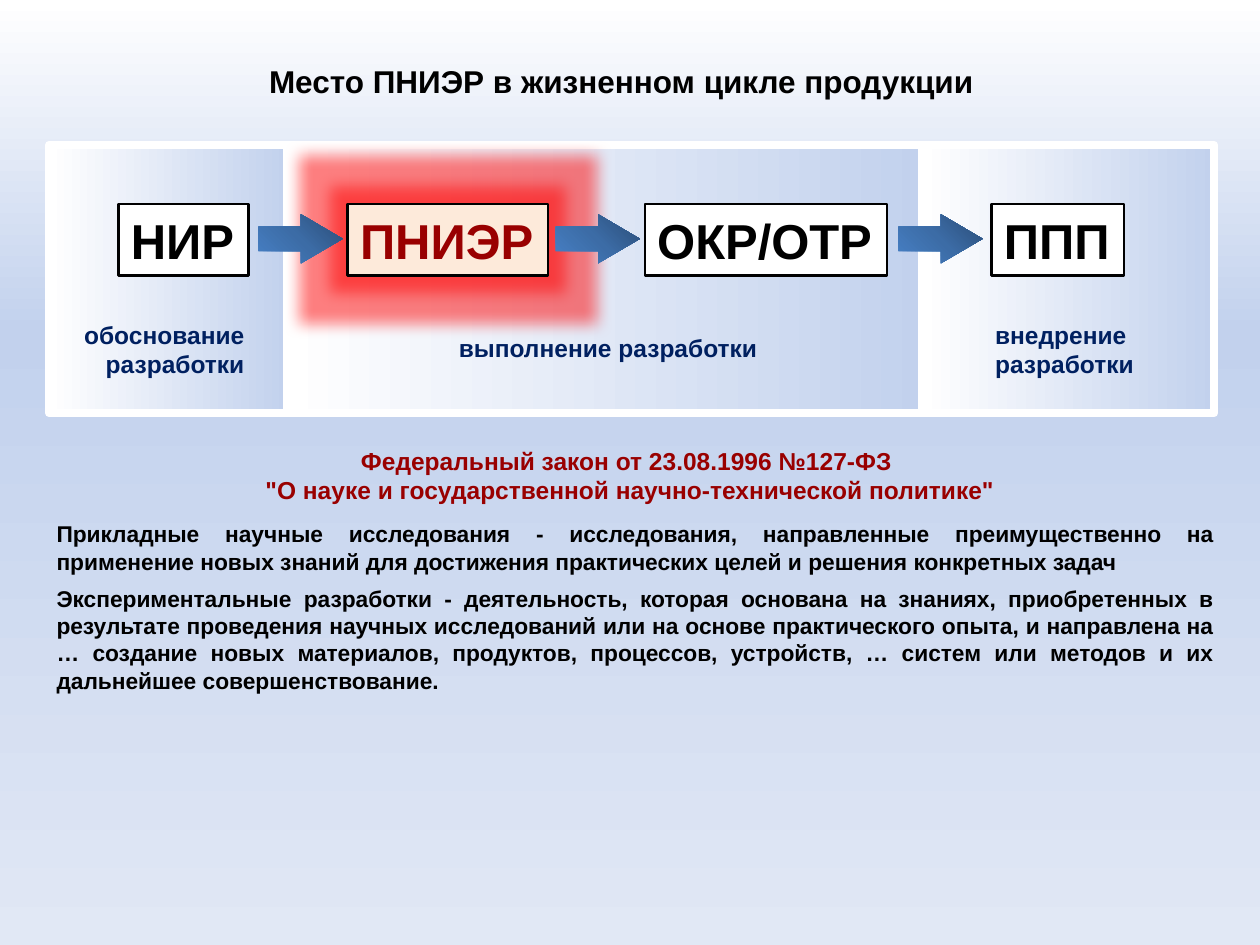
"""Build a slide on the place of applied research in the product life cycle."""
from typing import NamedTuple

from lxml import etree
from pptx import Presentation
from pptx.dml.color import RGBColor
from pptx.enum.shapes import MSO_SHAPE
from pptx.enum.text import MSO_ANCHOR, MSO_AUTO_SIZE, PP_ALIGN
from pptx.oxml import parse_xml
from pptx.oxml.ns import qn
from pptx.util import Cm, Pt

RECT, ARROW = MSO_SHAPE.RECTANGLE, MSO_SHAPE.RIGHT_ARROW
LEFT, MID, RIGHT, FULL = PP_ALIGN.LEFT, PP_ALIGN.CENTER, PP_ALIGN.RIGHT, PP_ALIGN.JUSTIFY
GROW, CENTER = MSO_AUTO_SIZE.SHAPE_TO_FIT_TEXT, MSO_ANCHOR.MIDDLE
FONT = "Arial"
BLACK = RGBColor(0x00, 0x00, 0x00)
WHITE = RGBColor(0xFF, 0xFF, 0xFF)
RED = RGBColor(0x99, 0x00, 0x00)
GLOW = RGBColor(0xFF, 0x00, 0x00)
NAVY = RGBColor(0x00, 0x20, 0x60)
PEACH = RGBColor(0xFD, 0xEA, 0xDA)
SKY = RGBColor(0xC2, 0xD1, 0xED)
PALE = RGBColor(0xE1, 0xE8, 0xF5)
DEEP = RGBColor(0x2A, 0x4C, 0x75)
STEEL = RGBColor(0x3C, 0x6C, 0xA6)
BLUE = RGBColor(0x47, 0x80, 0xC5)
SPACE = "http://schemas.openxmlformats.org/drawingml/2006/main"
DOWN = '<a:lin ang="5400000" scaled="0"/>'
ACROSS = '<a:lin ang="0" scaled="0"/>'
CORNER = ('<a:path path="circle"><a:fillToRect l="100000" t="0" r="0" b="100000"/>'
          '</a:path>')


class Area(NamedTuple):
    left: float
    top: float
    width: float
    height: float


class Stage(NamedTuple):
    text: str
    left: float
    width: float
    ink: RGBColor = BLACK
    fill: RGBColor = WHITE


class Note(NamedTuple):
    area: Area
    text: str
    size: float
    ink: RGBColor
    align: PP_ALIGN


PANELS = [(0.99, 4.8), (5.79, 12.8), (18.59, 5.89)]
STAGES = [
    Stage("НИР", 2.39, 2.62),
    Stage("ПНИЭР", 7.01, 4.04, RED, PEACH),
    Stage("ОКР/ОТР", 13, 4.88),
    Stage("ППП", 19.99, 2.67),
]
ARROWS = [5.21, 11.2, 18.11]
NOTES = [
    Note(Area(0.51, 1.12, 24.21, 1.02), "Место ПНИЭР в жизненном цикле продукции ",
         18, BLACK, MID),
    Note(Area(4.9, 8.86, 15.6, 1.45),
         "Федеральный закон от 23.08.1996 №127-ФЗ \n"
         "\"О науке и государственной научно-технической политике\"", 14, RED, MID),
    Note(Area(0.89, 10.36, 23.8, 1.37),
         "Прикладные научные исследования - исследования, направленные преимущественно "
         "на применение новых знаний для достижения практических целей и решения "
         "конкретных задач", 13, BLACK, FULL),
    Note(Area(0.89, 11.66, 23.8, 2.49),
         "Экспериментальные разработки - деятельность, которая основана на знаниях, "
         "приобретенных в результате проведения научных исследований или на основе "
         "практического опыта, и направлена на … создание новых материалов, продуктов, "
         "процессов, устройств, … систем или методов и их дальнейшее "
         "совершенствование.", 13, BLACK, FULL),
    Note(Area(0.99, 6.32, 4.19, 1.45), "обоснование разработки", 14, NAVY, RIGHT),
    Note(Area(8.51, 6.58, 7.01, 0.86), "выполнение разработки", 14, NAVY, RIGHT),
    Note(Area(19.81, 6.32, 4.6, 1.45), "внедрение разработки", 14, NAVY, LEFT),
]


def place(area: Area) -> list:
    return [Cm(side) for side in area]


def grade(root, fill, stops: list, shade: str) -> None:
    fill.gradient()
    marks = "".join(f'<a:gs pos="{spot * 1000}"><a:srgbClr val="{tone}"/></a:gs>'
                    for spot, tone in stops)
    old = next(root.iter(qn("a:gradFill")))
    old.getparent().replace(old, parse_xml(
        f'<a:gradFill xmlns:a="{SPACE}" rotWithShape="1">'
        f'<a:gsLst>{marks}</a:gsLst>{shade}</a:gradFill>'))


def write(frame, text: str, *, size: float, ink: RGBColor,
          align: PP_ALIGN = LEFT, wrap: bool = True) -> None:
    frame.word_wrap = wrap
    frame.auto_size = GROW
    for index, line in enumerate(text.split("\n")):
        para = frame.add_paragraph() if index else frame.paragraphs[0]
        para.alignment = align
        run = para.add_run()
        run.text = line
        run.font.name, run.font.size, run.font.bold = FONT, Pt(size), True
        run.font.color.rgb = ink


def block(slide, kind: MSO_SHAPE, area: Area):
    shape = slide.shapes.add_shape(kind, *place(area))
    shape.shadow.inherit = False
    return shape


def edge(shape, tone: RGBColor, width: float) -> None:
    shape.line.color.rgb = tone
    shape.line.width = Pt(width)


def panel(slide, left: float, width: float) -> None:
    shape = block(slide, RECT, Area(left, 2.92, width, 5.41))
    grade(shape.element, shape.fill, [(0, WHITE), (100, SKY)], ACROSS)
    edge(shape, WHITE, 4.5)


def halo(shape) -> None:
    effect = next(shape.element.iter(qn("a:effectLst")))
    glow = etree.SubElement(effect, qn("a:glow"), rad=str(Pt(18)))
    tone = etree.SubElement(glow, qn("a:srgbClr"), val=str(GLOW))
    etree.SubElement(tone, qn("a:alpha"), val="50000")


def box(slide, stage: Stage) -> None:
    shape = block(slide, RECT, Area(stage.left, 4.11, stage.width, 1.45))
    shape.fill.solid()
    shape.fill.fore_color.rgb = stage.fill
    edge(shape, BLACK, 1.5)
    shape.text_frame.vertical_anchor = CENTER
    write(shape.text_frame, stage.text, size=28, ink=stage.ink, wrap=False)
    if stage.fill == PEACH:
        halo(shape)


def arrow(slide, left: float) -> None:
    shape = block(slide, ARROW, Area(left, 4.32, 1.7, 0.99))
    shape.adjustments[0], shape.adjustments[1] = 0.5, 0.85
    grade(shape.element, shape.fill, [(0, DEEP), (50, STEEL), (100, BLUE)], CORNER)
    shape.line.fill.background()


def label(slide, note: Note) -> None:
    frame = slide.shapes.add_textbox(*place(note.area)).text_frame
    write(frame, note.text, size=note.size, ink=note.ink, align=note.align)


def main() -> None:
    deck = Presentation()
    deck.slide_width, deck.slide_height = Cm(25.4), Cm(19.05)
    slide = deck.slides.add_slide(deck.slide_layouts[6])
    grade(slide.element, slide.background.fill,
          [(0, WHITE), (35, SKY), (100, PALE)], DOWN)
    for left, width in reversed(PANELS):
        panel(slide, left, width)
    for stage in STAGES:
        box(slide, stage)
    for left in ARROWS:
        arrow(slide, left)
    for note in NOTES:
        label(slide, note)
    deck.save("out.pptx")


if __name__ == "__main__":
    main()
